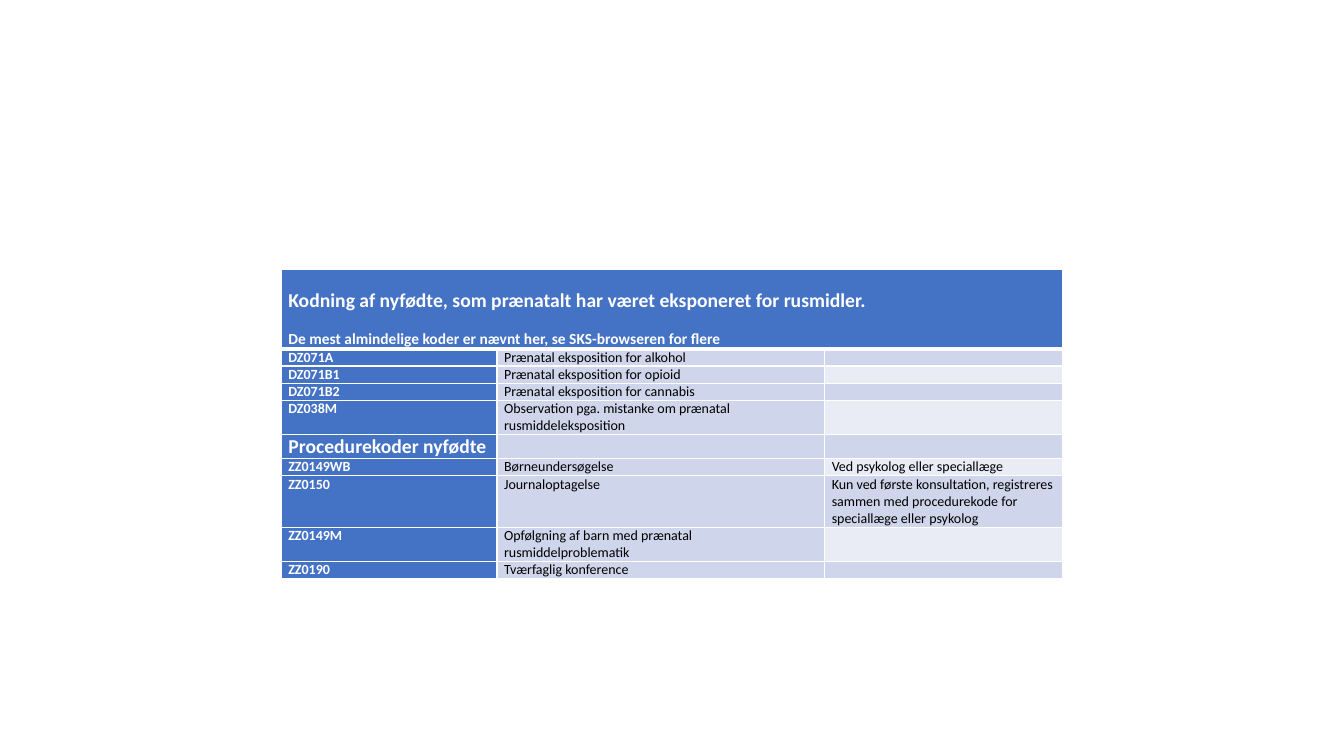
from dataclasses import dataclass

from lxml.etree import SubElement
from pptx import Presentation
from pptx.dml.color import RGBColor
from pptx.oxml.ns import qn
from pptx.table import _Cell
from pptx.text.text import _Paragraph
from pptx.util import Inches, Pt

BLUE, BAND_DARK, BAND_LIGHT = "4472C4", "CFD5EA", "E9EBF5"
WHITE, BLACK = "FFFFFF", "000000"
COLUMN_WIDTHS = (2.14, 3.25, 2.36)
LINE_HEIGHT = 0.17
HEADER_HEIGHT = 0.78
TITLE = "Kodning af nyfødte, som prænatalt har været eksponeret for rusmidler."
SUBTITLE = "De mest almindelige koder er nævnt her, se SKS-browseren for flere"


@dataclass(frozen=True)
class CodeRow:
    code: str
    description: str = ""
    remark: str = ""
    height: float = LINE_HEIGHT
    code_size: int = 10


CODE_ROWS = (
    CodeRow("DZ071A", "Prænatal eksposition for alkohol"),
    CodeRow("DZ071B1", "Prænatal eksposition for opioid"),
    CodeRow("DZ071B2", "Prænatal eksposition for cannabis"),
    CodeRow("DZ038M", "Observation pga. mistanke om prænatal rusmiddeleksposition",
            height=2 * LINE_HEIGHT),
    CodeRow("Procedurekoder nyfødte", height=0.24, code_size=14),
    CodeRow("ZZ0149WB", "Børneundersøgelse", "Ved psykolog eller speciallæge"),
    CodeRow("ZZ0150", "Journaloptagelse",
            "Kun ved første konsultation, registreres sammen med procedurekode "
            "for speciallæge eller psykolog", height=3 * LINE_HEIGHT),
    CodeRow("ZZ0149M", "Opfølgning af barn med prænatal rusmiddelproblematik",
            height=2 * LINE_HEIGHT),
    CodeRow("ZZ0190", "Tværfaglig konference"),
)


def rgb(color: str) -> RGBColor:
    return RGBColor.from_string(color)


def add_border(cell: _Cell, side: str, width: float) -> None:
    properties = cell._tc.get_or_add_tcPr()
    line = SubElement(properties, qn(f"a:ln{side}"), w=str(Pt(width)))
    fill = SubElement(line, qn("a:solidFill"))
    SubElement(fill, qn("a:srgbClr"), val=WHITE)


def style_cell(cell: _Cell, fill: str, top: float = 1, bottom: float = 1) -> None:
    """Set borders first, since the schema puts them before the fill."""
    for side, width in (("L", 1), ("R", 1), ("T", top), ("B", bottom)):
        add_border(cell, side, width)
    cell.fill.solid()
    cell.fill.fore_color.rgb = rgb(fill)
    cell.margin_left = cell.margin_right = Inches(0.07)
    cell.margin_top = cell.margin_bottom = 0


def write(paragraph: _Paragraph, text: str, size: int, color: str, bold: bool) -> None:
    if text:
        paragraph.text = text
    font = paragraph.font
    font.name, font.size, font.bold = "Calibri", Pt(size), bold
    font.color.rgb = rgb(color)


def main() -> None:
    presentation = Presentation()
    presentation.slide_width, presentation.slide_height = Inches(13.33), Inches(7.5)
    slide = presentation.slides.add_slide(presentation.slide_layouts[6])

    heights = [HEADER_HEIGHT] + [row.height for row in CODE_ROWS]
    table = slide.shapes.add_table(
        len(heights), len(COLUMN_WIDTHS), Inches(2.79), Inches(2.67),
        Inches(sum(COLUMN_WIDTHS)), Inches(sum(heights))).table
    table.first_col = True
    for column, width in zip(table.columns, COLUMN_WIDTHS):
        column.width = Inches(width)
    for row, height in zip(table.rows, heights):
        row.height = Inches(height)

    for cell in table.rows[0].cells:
        style_cell(cell, BLUE, bottom=3)
    header = table.cell(0, 0)
    header.merge(table.cell(0, len(COLUMN_WIDTHS) - 1))
    header.margin_top = Inches(0.2)
    write(header.text_frame.paragraphs[0], TITLE, 14, WHITE, True)
    subtitle = header.text_frame.add_paragraph()
    subtitle.space_before = Pt(12)
    write(subtitle, SUBTITLE, 11, WHITE, True)

    for index, code_row in enumerate(CODE_ROWS, start=1):
        remark_fill = BAND_DARK if index % 2 else BAND_LIGHT
        entries = (
            (code_row.code, BLUE, code_row.code_size, WHITE, True),
            (code_row.description, BAND_DARK, 10, BLACK, False),
            (code_row.remark, remark_fill, 10, BLACK, False),
        )
        for column, (text, fill, size, color, bold) in enumerate(entries):
            cell = table.cell(index, column)
            style_cell(cell, fill, top=3 if index == 1 else 1)
            write(cell.text_frame.paragraphs[0], text, size, color, bold)

    presentation.save("out.pptx")


if __name__ == "__main__":
    main()
